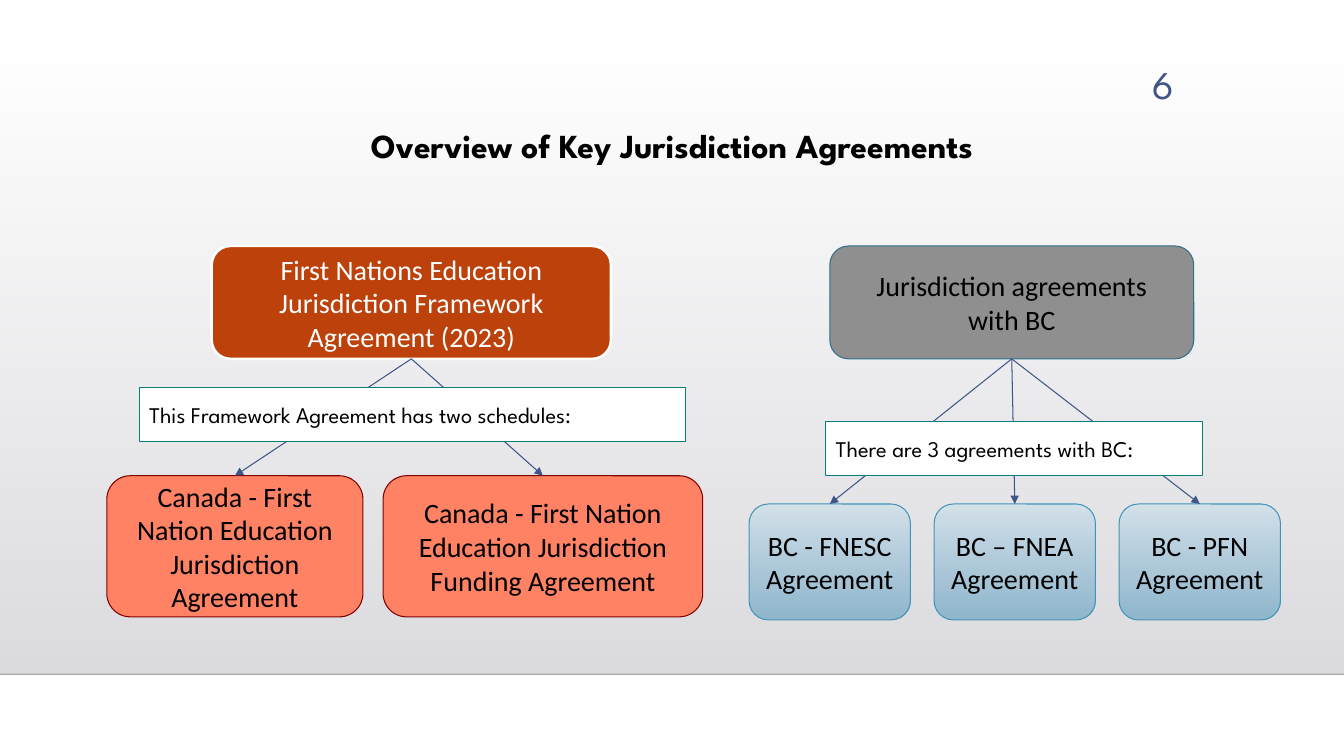
from pptx import Presentation
from pptx.dml.color import RGBColor
from pptx.enum.shapes import MSO_CONNECTOR, MSO_SHAPE
from pptx.enum.text import MSO_ANCHOR, PP_ALIGN
from pptx.oxml.ns import qn
from pptx.util import Inches, Pt
from lxml.etree import SubElement

BLACK = RGBColor(0x00, 0x00, 0x00)
WHITE = RGBColor(0xFF, 0xFF, 0xFF)
BACKDROP_TOP = RGBColor(0xDC, 0xDC, 0xE0)
BACKDROP_BOTTOM = RGBColor(0xDE, 0xDE, 0xE2)
INDIGO = RGBColor(0x41, 0x55, 0x88)
RUST = RGBColor(0xBC, 0x41, 0x0A)
CORAL = RGBColor(0xFF, 0x82, 0x65)
MAROON = RGBColor(0x80, 0x00, 0x00)
GRAY = RGBColor(0x8F, 0x8F, 0x8F)
STEEL = RGBColor(0x31, 0x6F, 0x89)
PALE_BLUE = RGBColor(0xD4, 0xE1, 0xEA)
MID_BLUE = RGBColor(0x8A, 0xB4, 0xCC)
EDGE_BLUE = RGBColor(0x42, 0x94, 0xB6)
TEAL = RGBColor(0x08, 0x7D, 0x7C)

BODY_FONT = "Calibri"
HEADING_FONT = "League Spartan"
TOP, BOTTOM = 0, 2


def set_alpha(color_element, percent):
    SubElement(color_element, qn("a:alpha")).set("val", str(percent * 1000))


def fill_gradient(shape, stops):
    shape.fill.gradient()
    shape.fill.gradient_angle = 270
    for stop, (color, opacity) in zip(shape.fill.gradient_stops, stops):
        stop.color.rgb = color
    for element, (color, opacity) in zip(shape._element.spPr.iter(qn("a:srgbClr")), stops):
        set_alpha(element, opacity)


def write(shape, lines, font_name, size, color, alignment, bold=False):
    frame = shape.text_frame
    frame.word_wrap = True
    frame.vertical_anchor = MSO_ANCHOR.MIDDLE
    frame.text = "\n".join(lines)
    for paragraph in frame.paragraphs:
        paragraph.alignment = alignment
        paragraph.font.name = font_name
        paragraph.font.size = Pt(size)
        paragraph.font.bold = bold
        paragraph.font.color.rgb = color


def add_panel(slide, kind, box, fill, line=None, width=0.75):
    shape = slide.shapes.add_shape(kind, *map(Inches, box))
    shape.shadow.inherit = False
    if isinstance(fill, RGBColor):
        shape.fill.solid()
        shape.fill.fore_color.rgb = fill
    else:
        fill_gradient(shape, fill)
    if line is None:
        shape.line.fill.background()
    else:
        shape.line.color.rgb = line
        shape.line.width = Pt(width)
    return shape


def add_agreement(slide, box, lines, fill, line, color=BLACK, width=0.75):
    shape = add_panel(slide, MSO_SHAPE.ROUNDED_RECTANGLE, box, fill, line, width)
    write(shape, lines, BODY_FONT, 20, color, PP_ALIGN.CENTER)
    return shape


def add_line(slide, start, end, color, width):
    connector = slide.shapes.add_connector(
        MSO_CONNECTOR.STRAIGHT, *map(Inches, (*start, *end)))
    connector.line.color.rgb = color
    connector.line.width = Pt(width)
    SubElement(connector._element.spPr, qn("a:effectLst"))
    return connector


def add_arrow(slide, parent, child):
    connector = add_line(slide, (0, 0), (0, 0), INDIGO, 0.75)
    connector.begin_connect(parent, BOTTOM)
    connector.end_connect(child, TOP)
    SubElement(connector.line._get_or_add_ln(), qn("a:tailEnd")).set("type", "triangle")


def add_branch(slide, parent, children, label_box, label):
    for child in children:
        add_arrow(slide, parent, child)
    shape = add_panel(slide, MSO_SHAPE.RECTANGLE, label_box, WHITE, TEAL)
    write(shape, [label], HEADING_FONT, 16, BLACK, PP_ALIGN.LEFT)


def add_backdrop(slide, left, top, width, height):
    add_panel(slide, MSO_SHAPE.RECTANGLE, (left, top, width, height),
              [(BACKDROP_TOP, 0), (BACKDROP_BOTTOM, 100)])
    base = top + height
    rule = add_line(slide, (left, base), (left + width, base), BLACK, 1)
    set_alpha(rule._element.spPr.find(".//" + qn("a:srgbClr")), 20)


def add_heading(slide, left, top, width):
    number = slide.shapes.add_textbox(
        Inches(left + width - 0.9), Inches(top), Inches(0.89), Inches(0.55))
    write(number, ["6"], HEADING_FONT, 28, INDIGO, PP_ALIGN.RIGHT)
    number.text_frame.vertical_anchor = MSO_ANCHOR.TOP
    title = slide.shapes.add_textbox(
        Inches(left), Inches(top + 0.64), Inches(width), Inches(0.5))
    write(title, ["Overview of Key Jurisdiction Agreements"],
          HEADING_FONT, 24, BLACK, PP_ALIGN.CENTER, bold=True)


def add_framework_branch(slide, left, top):
    parent = add_agreement(
        slide, (left + 1.04, top, 3.96, 1.12),
        ["First Nations Education Jurisdiction Framework Agreement (2023)"],
        RUST, WHITE, WHITE, 1.75)
    schedules = [
        (0, 2.54, "Canada - First Nation Education Jurisdiction Agreement"),
        (2.74, 3.17, "Canada - First Nation Education Jurisdiction Funding Agreement"),
    ]
    children = [
        add_agreement(slide, (left + offset, top + 2.28, width, 1.4), [name], CORAL, MAROON)
        for offset, width, name in schedules]
    add_branch(slide, parent, children, (left + 0.32, top + 1.4, 5.42, 0.54),
               "This Framework Agreement has two schedules:")


def add_province_branch(slide, left, top, width):
    parent = add_agreement(slide, (left + 0.8, top, 3.61, 1.12),
                           ["Jurisdiction agreements", "with BC"], GRAY, STEEL)
    names = ["BC - FNESC Agreement", "BC – FNEA Agreement", "BC - PFN Agreement"]
    child_width = 1.6
    pitch = (width - child_width) / (len(names) - 1)
    children = [
        add_agreement(slide, (left + index * pitch, top + 2.56, child_width, 1.15), [name],
                      [(PALE_BLUE, 100), (MID_BLUE, 92)], EDGE_BLUE)
        for index, name in enumerate(names)]
    add_branch(slide, parent, children, (left + 0.76, top + 1.74, 3.74, 0.54),
               "There are 3 agreements with BC:")


def main():
    presentation = Presentation()
    presentation.slide_width = Inches(13.33)
    presentation.slide_height = Inches(7.5)
    slide = presentation.slides.add_slide(presentation.slide_layouts[6])
    add_backdrop(slide, 0, 0.51, 13.33, 6.18)
    add_heading(slide, 1.58, 0.55, 10.17)
    add_framework_branch(slide, 1.06, 2.44)
    add_province_branch(slide, 7.43, 2.44, 5.27)
    presentation.save("out.pptx")


if __name__ == "__main__":
    main()
